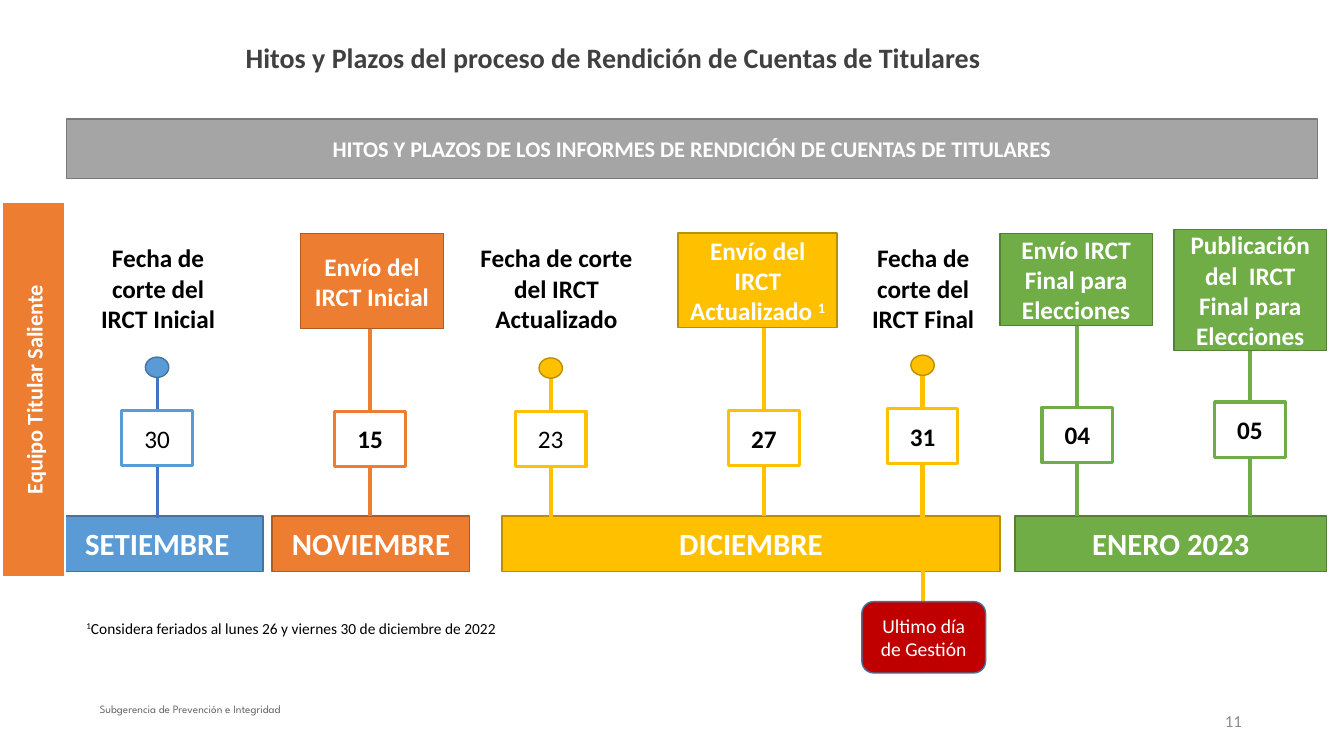
from lxml import etree
from pptx import Presentation
from pptx.dml.color import RGBColor
from pptx.enum.shapes import MSO_CONNECTOR, MSO_SHAPE
from pptx.enum.text import MSO_ANCHOR, MSO_AUTO_SIZE, PP_ALIGN
from pptx.oxml.ns import qn
from pptx.util import Cm, Pt

RECT, ROUNDED = MSO_SHAPE.RECTANGLE, MSO_SHAPE.ROUNDED_RECTANGLE
DOT, STRAIGHT = MSO_SHAPE.FLOWCHART_CONNECTOR, MSO_CONNECTOR.STRAIGHT
TOP, MIDDLE = MSO_ANCHOR.TOP, MSO_ANCHOR.MIDDLE
LEFT, CENTER, RIGHT = PP_ALIGN.LEFT, PP_ALIGN.CENTER, PP_ALIGN.RIGHT
FIXED_SIZE = MSO_AUTO_SIZE.NONE

WHITE, BLACK = RGBColor(0xFF, 0xFF, 0xFF), RGBColor(0, 0, 0)
TITLE_GRAY = RGBColor(0x40, 0x40, 0x40)
FOOTER_GRAY = RGBColor(0x66, 0x66, 0x66)
PAGE_GRAY = RGBColor(0x8C, 0x8C, 0x8C)
GRAY, GRAY_EDGE = RGBColor(0xA5, 0xA5, 0xA5), RGBColor(0x7A, 0x7A, 0x7A)
BLUE, BLUE_EDGE = RGBColor(0x5B, 0x9B, 0xD5), RGBColor(0x43, 0x73, 0x9E)
ORANGE, ORANGE_EDGE = RGBColor(0xED, 0x7D, 0x31), RGBColor(0xAF, 0x5C, 0x24)
GOLD, GOLD_EDGE = RGBColor(0xFF, 0xC0, 0x00), RGBColor(0xBD, 0x8E, 0x00)
GREEN, GREEN_EDGE = RGBColor(0x70, 0xAD, 0x47), RGBColor(0x53, 0x80, 0x35)
STEM_BLUE, RED = RGBColor(0x44, 0x72, 0xC4), RGBColor(0xC0, 0x00, 0x00)

MONTH_TOP, MONTH_HEIGHT = 13.0, 1.4
DATE_WIDTH, DATE_HEIGHT = 1.78, 1.4
DOT_WIDTH, DOT_HEIGHT, DOT_RISE = 0.59, 0.51, 1.34

# name, left, width, fill, edge
MONTHS = [
    ("SETIEMBRE", 1.3, 5.33, BLUE, BLUE_EDGE),
    ("NOVIEMBRE", 6.86, 4.98, ORANGE, ORANGE_EDGE),
    ("DICIEMBRE", 12.65, 12.55, GOLD, GOLD_EDGE),
    ("ENERO 2023", 25.58, 7.85, GREEN, GREEN_EDGE),
]
# day, bold, center, date top, label, label left, label width, fill, edge, stem colour, stem width
CUTOFFS = [
    ("30", False, 3.96, 10.34, "Fecha de corte del IRCT Inicial", 2.26, 3.45,
     BLUE, BLUE_EDGE, STEM_BLUE, 2.25),
    ("23", False, 13.88, 10.36, "Fecha de corte del IRCT Actualizado", 11.84, 4.37,
     GOLD, GOLD_EDGE, GOLD, 3),
    ("31", True, 23.25, 10.29, "Fecha de corte del IRCT Final", 21.31, 3.91,
     GOLD, GOLD_EDGE, GOLD, 3),
]
# day, center, date top, label spans, card left, top, width, height, fill, edge
DELIVERIES = [
    ("15", 9.33, 10.36, ["Envío del IRCT Inicial"], 7.57, 5.89, 3.61, 2.39,
     ORANGE, ORANGE_EDGE),
    ("27", 19.25, 10.34, ["Envío del IRCT Actualizado ", "^1"], 17.09, 5.87, 4.01, 2.39,
     GOLD, GOLD_EDGE),
    ("04", 27.15, 10.26, ["Envío IRCT Final para Elecciones"], 25.2, 5.89, 3.84, 2.31,
     GREEN, GREEN_EDGE),
    ("05", 31.5, 10.13, ["Publicación del  IRCT Final para Elecciones"],
     29.59, 5.79, 3.84, 3.05, GREEN, GREEN_EDGE),
]


class TimelinePage:
    """Draws the elements of one slide; lengths are in centimetres."""

    def __init__(self, page, font="Calibri"):
        self.page = page
        self.font = font

    def set_text(self, box, spans, size, color, bold=False, align=CENTER,
                 anchor=MIDDLE, font=None, inset=None):
        """Fill a shape with spans; a leading ^ marks a superscript."""
        frame = box.text_frame
        frame.word_wrap = True
        frame.auto_size = FIXED_SIZE
        frame.vertical_anchor = anchor
        if inset is not None:
            frame.margin_left = frame.margin_right = Cm(inset)
            frame.margin_top = frame.margin_bottom = Cm(inset)
        para = frame.paragraphs[0]
        para.alignment = align
        for words in spans:
            span = para.add_run()
            span.text = words.lstrip("^")
            span.font.name = font or self.font
            span.font.size = Pt(size)
            span.font.bold = bold
            span.font.color.rgb = color
            if words.startswith("^"):
                span.font._element.set("baseline", "30000")

    def title(self, words, left, top, width, height):
        box = self.page.shapes.title
        box.left, box.top, box.width, box.height = map(Cm, (left, top, width, height))
        self.set_text(box, [words], 20, TITLE_GRAY, True, LEFT, TOP, inset=0.25)

    def text(self, spans, left, top, width, height, size, color, **style):
        box = self.page.shapes.add_textbox(*map(Cm, (left, top, width, height)))
        self.set_text(box, spans, size, color, **style)

    def shape(self, kind, left, top, width, height, fill, edge, weight=1):
        box = self.page.shapes.add_shape(kind, *map(Cm, (left, top, width, height)))
        box.shadow.inherit = False
        box.fill.solid()
        box.fill.fore_color.rgb = fill
        box.line.color.rgb = edge
        box.line.width = Pt(weight)
        return box

    def panel(self, spans, left, top, width, height, fill, edge, size,
              kind=RECT, bold=True):
        box = self.shape(kind, left, top, width, height, fill, edge)
        self.set_text(box, spans, size, WHITE, bold)
        return box

    def stem(self, x, top, bottom, color, weight=3):
        line = self.page.shapes.add_connector(STRAIGHT, Cm(x), Cm(top), Cm(x), Cm(bottom))
        line.line.color.rgb = color
        line.line.width = Pt(weight)
        etree.SubElement(line._element.spPr, qn("a:effectLst"))

    def date(self, day, center, top, color, bold=True):
        box = self.shape(RECT, center - DATE_WIDTH / 2, top, DATE_WIDTH, DATE_HEIGHT,
                         WHITE, color, 2.25)
        self.set_text(box, [day], 18, BLACK, bold)


def main():
    deck = Presentation()
    deck.slide_width, deck.slide_height = Cm(33.87), Cm(19.05)
    draw = TimelinePage(deck.slides.add_slide(deck.slide_layouts[5]))

    # Heading and banner
    draw.title("Hitos y Plazos del proceso de Rendición de Cuentas de Titulares",
               5.94, 0.76, 25.25, 1.37)
    draw.panel(["HITOS Y PLAZOS DE LOS INFORMES DE RENDICIÓN DE CUENTAS DE TITULARES"],
               1.68, 3.0, 31.52, 1.5, GRAY, GRAY_EDGE, 16)

    # Months
    for name, left, width, fill, edge in MONTHS:
        draw.panel([name], left, MONTH_TOP, width, MONTH_HEIGHT, fill, edge, 22)

    # Cut-off dates
    for (day, bold, center, top, label, left, width,
         fill, edge, stem_color, weight) in CUTOFFS:
        dot_top = top - DOT_RISE
        draw.text([label], left, 5.99, width, 2.57, 18, BLACK, bold=True, anchor=TOP)
        draw.stem(center, dot_top + DOT_HEIGHT / 2, MONTH_TOP + 0.05, stem_color, weight)
        draw.date(day, center, top, fill, bold)
        draw.shape(DOT, center - DOT_WIDTH / 2, dot_top, DOT_WIDTH, DOT_HEIGHT, fill, edge)

    # Delivery dates
    for day, center, top, label, left, card_top, width, height, fill, edge in DELIVERIES:
        draw.stem(center, card_top + height, MONTH_TOP, fill)
        draw.panel(label, left, card_top, width, height, fill, edge, 18)
        draw.date(day, center, top, fill)

    # Last day in office
    draw.stem(23.27, 13.74, 15.16, GOLD)
    draw.panel(["Ultimo día de Gestión"], 21.72, 15.16, 3.12, 1.8, RED, BLUE_EDGE, 14,
               kind=ROUNDED, bold=False)

    # Side band
    band = draw.panel(["Equipo Titular Saliente"], 0.05, 5.08, 1.6, 9.47, ORANGE, WHITE, 16)
    band.line.width = Pt(1.5)
    band.text_frame._txBody.bodyPr.set("vert", "vert270")

    # Footnote, footer and page number
    draw.text(["^1", "Considera feriados al lunes 26 y viernes 30 de diciembre de 2022"],
              1.93, 15.47, 15.01, 0.74, 11, BLACK, align=LEFT, anchor=TOP)
    draw.text(["Subgerencia de Prevención e Integridad"], 2.26, 17.45, 6.65, 0.86, 8,
              FOOTER_GRAY, align=LEFT, anchor=TOP, font="League Spartan", inset=0.25)
    draw.text(["11"], 23.93, 17.65, 7.62, 1.02, 12, PAGE_GRAY, align=RIGHT)

    deck.save("out.pptx")


if __name__ == "__main__":
    main()
